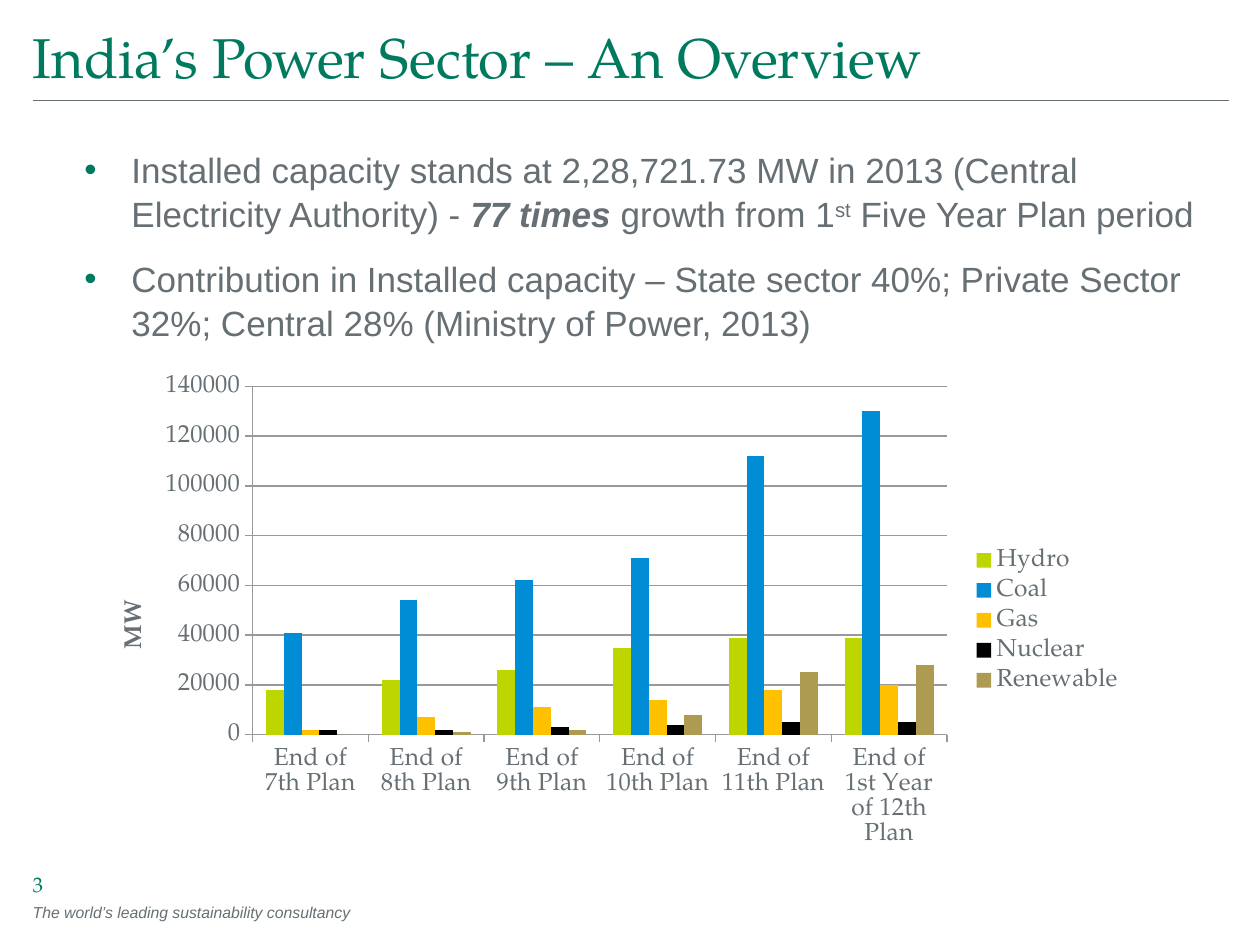
import collections

import lxml.etree
import pptx
import pptx.chart.data
import pptx.dml.color
import pptx.enum.chart
import pptx.enum.shapes
import pptx.enum.text
import pptx.oxml
import pptx.oxml.ns
import pptx.util

Cm = pptx.util.Cm
Pt = pptx.util.Pt
RGBColor = pptx.dml.color.RGBColor
qn = pptx.oxml.ns.qn

GREEN = RGBColor(0x00, 0x7A, 0x5F)
SLATE = RGBColor(0x66, 0x6F, 0x74)
GRID_GREY = RGBColor(0x99, 0x99, 0x99)
LIME = RGBColor(0xBE, 0xD6, 0x00)
BLUE = RGBColor(0x00, 0x8D, 0xD6)
AMBER = RGBColor(0xFF, 0xC0, 0x00)
BLACK = RGBColor(0x00, 0x00, 0x00)
OLIVE = RGBColor(0xAD, 0x9B, 0x51)
SERIF = "TeX Gyre Pagella"
SANS = "Arial"

PLANS = ["End of 7th Plan", "End of 8th Plan", "End of 9th Plan",
         "End of 10th Plan", "End of 11th Plan", "End of 1st Year of 12th Plan"]
SOURCES = [
    ("Hydro", LIME, [18000, 22000, 26000, 35000, 39000, 39000]),
    ("Coal", BLUE, [41000, 54000, 62000, 71000, 112000, 130000]),
    ("Gas", AMBER, [2000, 7000, 11000, 14000, 18000, 20000]),
    ("Nuclear", BLACK, [2000, 2000, 3000, 4000, 5000, 5000]),
    ("Renewable", OLIVE, [0, 1000, 2000, 8000, 25000, 28000]),
]
POINTS = [
    [("Installed capacity stands at 2,28,721.73 MW in 2013 (Central "
      "Electricity Authority) - ", ""), ("77 times", "strong"),
     (" growth from 1", ""), ("st", "super"), (" Five Year Plan period", "")],
    [("Contribution in Installed capacity – State sector 40%; Private Sector "
      "32%; Central 28% (Ministry of Power, 2013)", "")],
]

Box = collections.namedtuple("Box", "left top width height")


def place(shape, box):
    """Move a shape to a box given in centimetres."""
    shape.left, shape.top, shape.width, shape.height = map(Cm, box)


def style_font(font, name, size, color):
    """Set the face, size and colour of a font."""
    font.name = name
    font.size = Pt(size)
    font.color.rgb = color


def prepare_frame(frame, anchor, bottom):
    """Wrap a text frame and set its anchor and bottom inset."""
    frame.word_wrap = True
    frame.auto_size = pptx.enum.text.MSO_AUTO_SIZE.NONE
    frame.vertical_anchor = anchor
    frame.margin_left = frame.margin_right = frame.margin_top = 0
    frame.margin_bottom = Cm(bottom)


def add_header(page, box):
    """Place the title with a thin rule along the bottom of the box."""
    title = page.shapes.title
    place(title, box._replace(height=box.height - 0.05))
    prepare_frame(title.text_frame, pptx.enum.text.MSO_ANCHOR.TOP, 0.13)
    para = title.text_frame.paragraphs[0]
    para.text = "India’s Power Sector – An Overview"
    para.alignment = pptx.enum.text.PP_ALIGN.LEFT
    style_font(para.font, SERIF, 32, GREEN)
    bottom = Cm(box.top + box.height)
    rule = page.shapes.add_connector(
        pptx.enum.shapes.MSO_CONNECTOR.STRAIGHT,
        Cm(box.left), bottom, Cm(box.left + box.width), bottom)
    rule.line.color.rgb = SLATE
    rule.line.width = Pt(0.5)
    lxml.etree.SubElement(rule._element.spPr, qn("a:effectLst"))


def add_bullet(para):
    """Give a paragraph a green bullet with a hanging indent."""
    properties = para._p.get_or_add_pPr()
    properties.set("marL", str(Cm(0.95)))
    properties.set("indent", str(-Cm(0.95)))
    color = lxml.etree.SubElement(properties, qn("a:buClr"))
    lxml.etree.SubElement(color, qn("a:srgbClr")).set("val", str(GREEN))
    lxml.etree.SubElement(properties, qn("a:buFont")).set("typeface", SANS)
    lxml.etree.SubElement(properties, qn("a:buChar")).set("char", "•")


def add_points(page, box):
    """Fill the body placeholder with the bulleted points."""
    body = page.placeholders[1]
    place(body, box)
    frame = body.text_frame
    prepare_frame(frame, pptx.enum.text.MSO_ANCHOR.TOP, 0.13)
    for index, point in enumerate(POINTS):
        para = frame.add_paragraph() if index else frame.paragraphs[0]
        add_bullet(para)
        para.space_before = Pt(12 if index else 0)
        para.line_spacing = 1.05
        style_font(para.font, SANS, 20, SLATE)
        for text, emphasis in point:
            span = para.add_run()
            span.text = text
            if emphasis == "strong":
                span.font.bold = span.font.italic = True
            elif emphasis == "super":
                span._r.get_or_add_rPr().set("baseline", "30000")


def set_layout(parent, position, target, **fractions):
    """Give a chart part a manual layout in fractions of the chart."""
    for old in parent.findall(qn("c:layout")):
        parent.remove(old)
    layout = parent.makeelement(qn("c:layout"))
    parent.insert(position, layout)
    manual = lxml.etree.SubElement(layout, qn("c:manualLayout"))
    if target:
        lxml.etree.SubElement(manual, qn("c:layoutTarget")).set("val", target)
    for side in ("xMode", "yMode"):
        lxml.etree.SubElement(manual, qn("c:" + side)).set("val", "edge")
    for name, value in fractions.items():
        lxml.etree.SubElement(manual, qn("c:" + name)).set("val", str(value))


def add_capacity_chart(page, box):
    """Add the clustered columns of capacity by plan and source."""
    data = pptx.chart.data.CategoryChartData()
    data.categories = PLANS
    for name, _, values in SOURCES:
        data.add_series(name, values)
    chart = page.shapes.add_chart(
        pptx.enum.chart.XL_CHART_TYPE.COLUMN_CLUSTERED,
        *map(Cm, box), data).chart
    style_font(chart.font, SERIF, 14, SLATE)
    chart.has_title = False
    chart.has_legend = True
    chart.legend.position = pptx.enum.chart.XL_LEGEND_POSITION.RIGHT
    chart.legend.include_in_layout = False

    plot = chart.plots[0]
    plot.gap_width = 150
    plot.overlap = 0
    plot.vary_by_categories = False
    for series, (_, color, _) in zip(plot.series, SOURCES):
        series.format.fill.solid()
        series.format.fill.fore_color.rgb = color
        series.invert_if_negative = False

    values = chart.value_axis
    values.minimum_scale = 0
    values.maximum_scale = 140000
    values.major_unit = 20000
    values.has_major_gridlines = True
    for line in (values.major_gridlines.format.line, values.format.line,
                 chart.category_axis.format.line):
        line.color.rgb = GRID_GREY
        line.width = Pt(0.75)
    for axis in (values, chart.category_axis):
        axis.major_tick_mark = pptx.enum.chart.XL_TICK_MARK.OUTSIDE
    para = values.axis_title.text_frame.paragraphs[0]
    para.text = "MW"
    style_font(para.font, SERIF, 14, SLATE)
    para.font.bold = True
    set_layout(values.axis_title._element, 1, None, x=0.03, y=0.45)
    plot_area = chart._chartSpace.chart.plotArea
    set_layout(plot_area, 0, "inner", x=0.16, y=0.03, w=0.66, h=0.7)


def add_footer(page, box):
    """Stack the page number above the tagline."""
    number_height = 1.04
    anchors = pptx.enum.text.MSO_ANCHOR
    rows = [
        ("3", Box(box.left, box.top, 2.95, number_height),
         anchors.BOTTOM, (SERIF, 12, GREEN), False),
        ("The world’s leading sustainability consultancy",
         Box(box.left, box.top + number_height, box.width, box.height - number_height),
         anchors.MIDDLE, (SANS, 9, SLATE), True),
    ]
    for text, row, anchor, style, italic in rows:
        label = page.shapes.add_textbox(*map(Cm, row))
        prepare_frame(label.text_frame, anchor, 0)
        para = label.text_frame.paragraphs[0]
        para.text = text
        style_font(para.font, *style)
        para.font.italic = italic


def main():
    """Build the slide and save the deck."""
    deck = pptx.Presentation()
    deck.slide_width, deck.slide_height = Cm(25.4), Cm(19.05)
    page = deck.slides.add_slide(deck.slide_layouts[1])
    add_header(page, Box(0.66, 0.46, 24.11, 1.57))
    add_points(page, Box(1.7, 2.95, 23.06, 13.31))
    add_capacity_chart(page, Box(1.7, 7.49, 21.21, 10.03))
    add_footer(page, Box(0.66, 17.04, 12.47, 1.66))
    deck.save("out.pptx")


if __name__ == "__main__":
    main()
